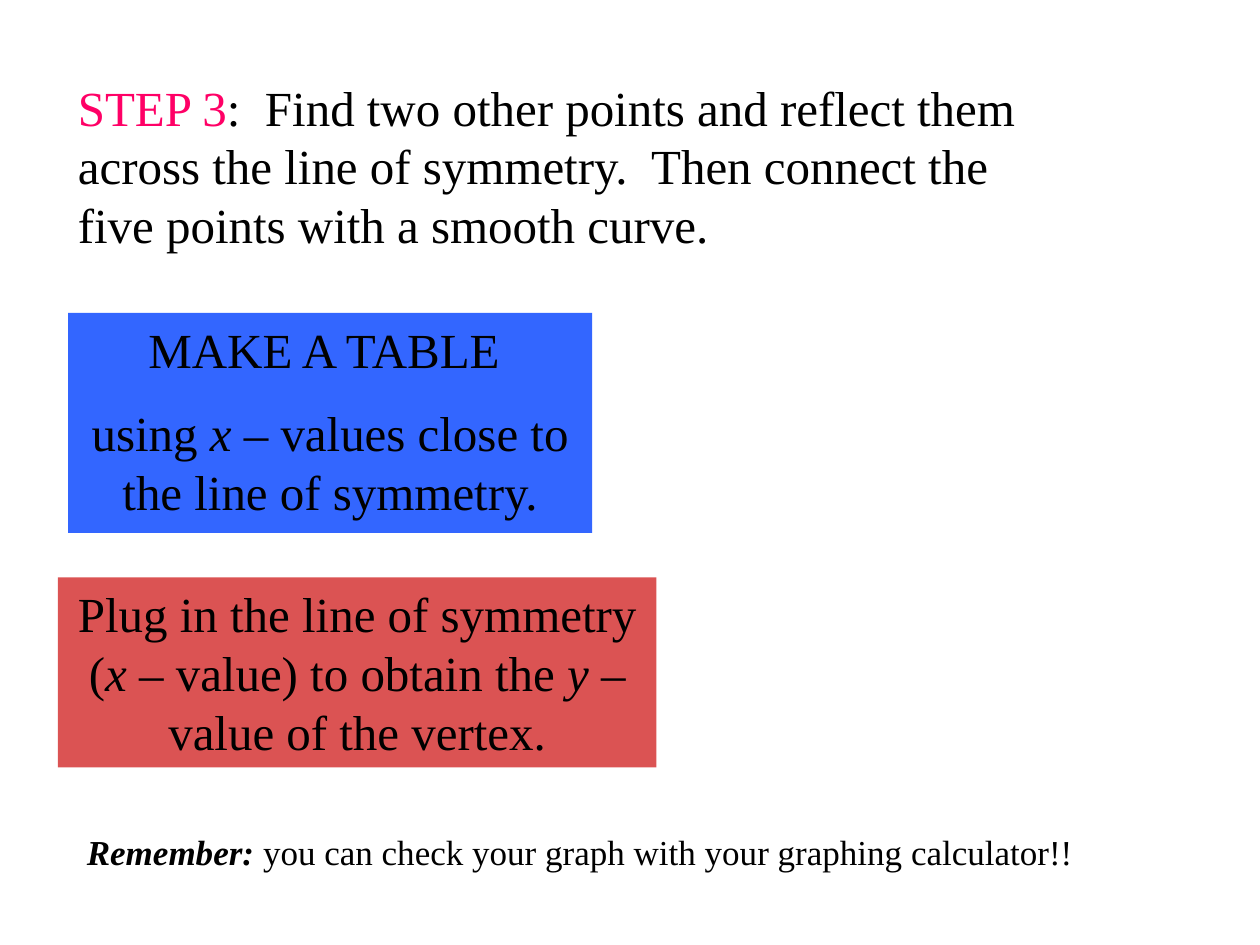
from dataclasses import dataclass, field

from pptx import Presentation
from pptx.dml.color import RGBColor as Rgb
from pptx.enum.shapes import MSO_SHAPE as Preset
from pptx.enum.text import MSO_ANCHOR as Anchor, PP_ALIGN as Align
from pptx.util import Inches, Pt

COLORS = {"ink": "000000", "step": "FF0066", "table": "3366FF", "vertex": "DB5353"}
ITALIC = {"italic": True}


@dataclass
class LessonSlide:
    """Hold the text style and the current slide, placing elements by shares of its size."""

    deck: object
    page: object
    font: dict = field(default_factory=lambda: {"name": "Times New Roman", "size": Pt(28)})

    def place(self, left, top, width, height):
        across, down = self.deck.slide_width, self.deck.slide_height
        return [int(share * side) for share, side in
                zip((left, top, width, height), (across, down, across, down))]

    def fill_text(self, box, paragraphs, align, **style):
        frame = box.text_frame
        for name, value in {"word_wrap": True, "vertical_anchor": Anchor.TOP}.items():
            setattr(frame, name, value)
        for index, spans in enumerate(paragraphs):
            para = frame.add_paragraph() if index else frame.paragraphs[0]
            para.alignment = align
            if index:
                para.space_before = Pt(14)
            for text, changes in spans:
                span = para.add_run()
                span.text = text
                look = {**self.font, **style, **changes}
                span.font.color.rgb = Rgb.from_string(COLORS[look.pop("color", "ink")])
                for name, value in look.items():
                    setattr(span.font, name, value)

    def text(self, area, paragraphs, **style):
        box = self.page.shapes.add_textbox(*self.place(*area))
        self.fill_text(box, paragraphs, Align.LEFT, **style)

    def panel(self, area, color, paragraphs):
        box = self.page.shapes.add_shape(Preset.RECTANGLE, *self.place(*area))
        box.shadow.inherit = False
        box.fill.solid()
        box.fill.fore_color.rgb = Rgb.from_string(COLORS[color])
        box.line.fill.background()
        self.fill_text(box, paragraphs, Align.CENTER)


def main():
    deck = Presentation()
    deck.slide_width, deck.slide_height = Inches(10), Inches(7.5)
    lesson = LessonSlide(deck, deck.slides.add_slide(deck.slide_layouts[6]))

    lesson.text((0.052, 0.075, 0.806, 0.2), [[
        ("STEP 3", {"color": "step"}),
        (":  Find two other points and reflect them across the line of symmetry.  "
         "Then connect the five points with a smooth curve.", {}),
    ]])
    lesson.panel((0.054, 0.331, 0.416, 0.233), "table", [
        [("MAKE A TABLE ", {})],
        [("using ", {}), ("x", ITALIC), (" – values close to the line of symmetry.", {})],
    ])
    lesson.panel((0.046, 0.611, 0.475, 0.201), "vertex", [[
        ("Plug in the line of symmetry (", {}), ("x", ITALIC),
        (" – value) to obtain the ", {}), ("y – ", ITALIC),
        ("value of the vertex.", {}),
    ]])
    lesson.text((0.059, 0.872, 0.862, 0.059), [[
        ("Remember: ", {"bold": True, **ITALIC}),
        ("you can check your graph with your graphing calculator!!", {}),
    ]], size=Pt(20))
    deck.save("out.pptx")


if __name__ == "__main__":
    main()
